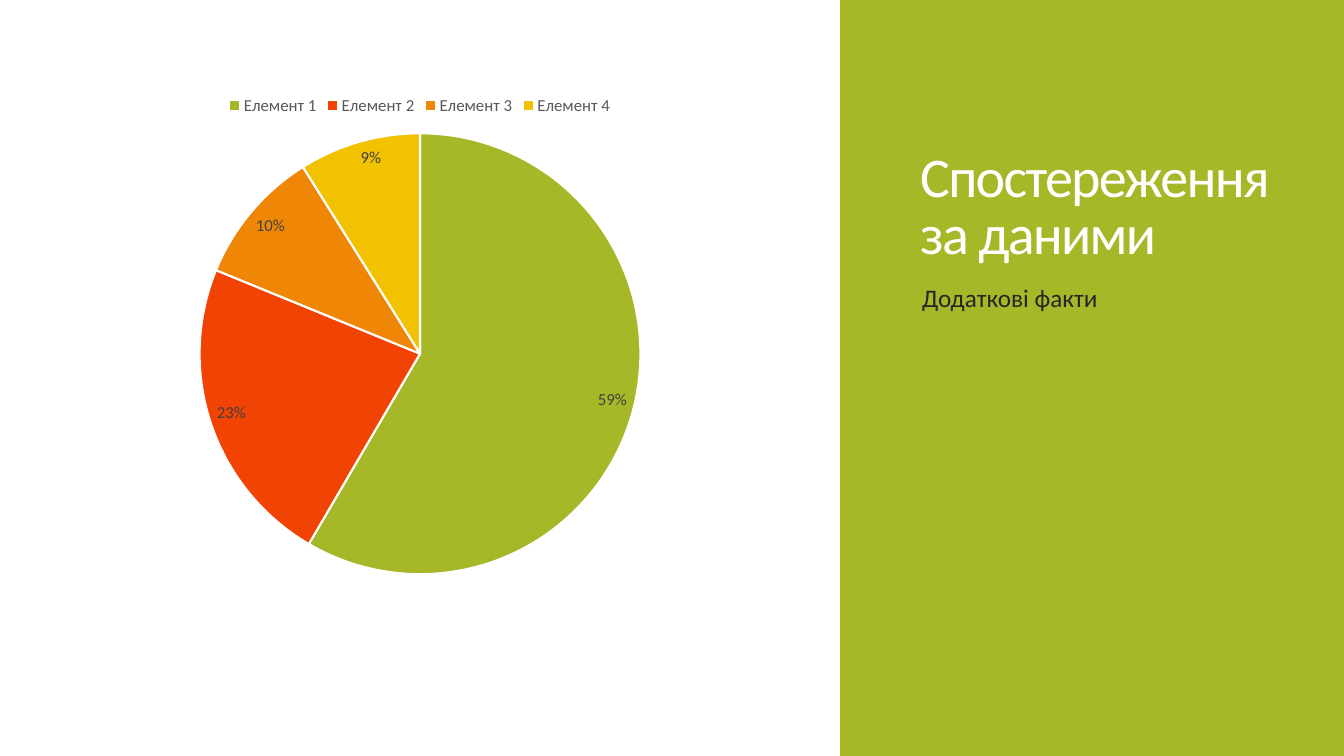
"""Build a slide with a pie chart beside a green title panel."""
from dataclasses import dataclass

from pptx import Presentation
from pptx.chart.data import CategoryChartData
from pptx.dml.color import RGBColor
from pptx.enum.chart import XL_CHART_TYPE as ChartType
from pptx.enum.chart import XL_LABEL_POSITION as LabelPosition
from pptx.enum.chart import XL_LEGEND_POSITION as LegendPosition
from pptx.enum.shapes import MSO_SHAPE as Preset
from pptx.enum.text import MSO_ANCHOR as Anchor
from pptx.slide import Slide
from pptx.text.text import Font
from pptx.util import Cm, Pt

FONT = "Calibri"
GREEN = "A6B727"
WHITE = "FFFFFF"


@dataclass
class Slice:
    name: str
    value: int
    color: str


@dataclass
class Caption:
    text: str
    left: float
    top: float
    width: float
    height: float
    size: float
    color: str
    anchor: Anchor
    line_spacing: float = 1.0
    space_before: float = 0
    tracking: int = 0


SLICES = [
    Slice("Елемент 1", 59, GREEN),
    Slice("Елемент 2", 23, "F04304"),
    Slice("Елемент 3", 10, "EF8606"),
    Slice("Елемент 4", 9, "F2C100"),
]
CAPTIONS = [
    Caption("Спостереження за даними", 22.94, 1.5, 9.4, 5.33, 40, WHITE,
            Anchor.BOTTOM, line_spacing=0.85, tracking=-120),
    Caption("Додаткові факти", 22.99, 6.99, 9.45, 8.69, 18, "262626",
            Anchor.TOP, space_before=12),
]


def rgb(color: str) -> RGBColor:
    """Turn a hex string into a colour."""
    return RGBColor.from_string(color)


def set_font(font: Font, size: float, color: str) -> None:
    """Give a font its face, size and colour."""
    font.name = FONT
    font.size = Pt(size)
    font.color.rgb = rgb(color)


def add_panel(page: Slide) -> None:
    """Draw the green panel on the right."""
    panel = page.shapes.add_shape(Preset.RECTANGLE, Cm(21.17), 0, Cm(12.7), Cm(19.05))
    panel.shadow.inherit = False
    panel.fill.solid()
    panel.fill.fore_color.rgb = rgb(GREEN)
    panel.line.fill.background()


def add_caption(page: Slide, caption: Caption) -> None:
    """Write one caption in its own text box."""
    box = page.shapes.add_textbox(Cm(caption.left), Cm(caption.top),
                                  Cm(caption.width), Cm(caption.height))
    box.text_frame.word_wrap = True
    box.text_frame.vertical_anchor = caption.anchor
    para = box.text_frame.paragraphs[0]
    para.line_spacing = caption.line_spacing
    para.space_before = Pt(caption.space_before)
    set_font(para.font, caption.size, caption.color)
    span = para.add_run()
    span.text = caption.text
    if caption.tracking:
        span.font._element.set("spc", str(caption.tracking))


def add_pie(page: Slide, slices: list[Slice]) -> None:
    """Draw the pie chart with its legend and labels."""
    data = CategoryChartData()
    data.categories = [piece.name for piece in slices]
    data.add_series("Series 1", [piece.value for piece in slices])
    chart = page.shapes.add_chart(ChartType.PIE, Cm(2.12), Cm(2.12),
                                  Cm(16.93), Cm(12.7), data).chart
    set_font(chart.font, 10, "000000")
    chart.has_title = False
    chart.has_legend = True
    chart.legend.position = LegendPosition.TOP
    chart.legend.include_in_layout = False
    set_font(chart.legend.font, 12, "595959")

    plot = chart.plots[0]
    plot.vary_by_categories = True
    for index, piece in enumerate(slices):
        point = plot.series[0].points[index].format
        point.fill.solid()
        point.fill.fore_color.rgb = rgb(piece.color)
        point.line.color.rgb = rgb(WHITE)
        point.line.width = Pt(1.5)

    labels = plot.series[0].data_labels
    labels.show_value = True
    labels.number_format = '0"%"'
    labels.number_format_is_linked = False
    labels.position = LabelPosition.INSIDE_END
    set_font(labels.font, 12, "404040")


def main() -> None:
    """Build and save the deck."""
    deck = Presentation()
    deck.slide_width, deck.slide_height = Cm(33.87), Cm(19.05)
    page = deck.slides.add_slide(deck.slide_layouts[6])
    add_panel(page)
    add_pie(page, SLICES)
    for caption in CAPTIONS:
        add_caption(page, caption)
    deck.save("out.pptx")


if __name__ == "__main__":
    main()
